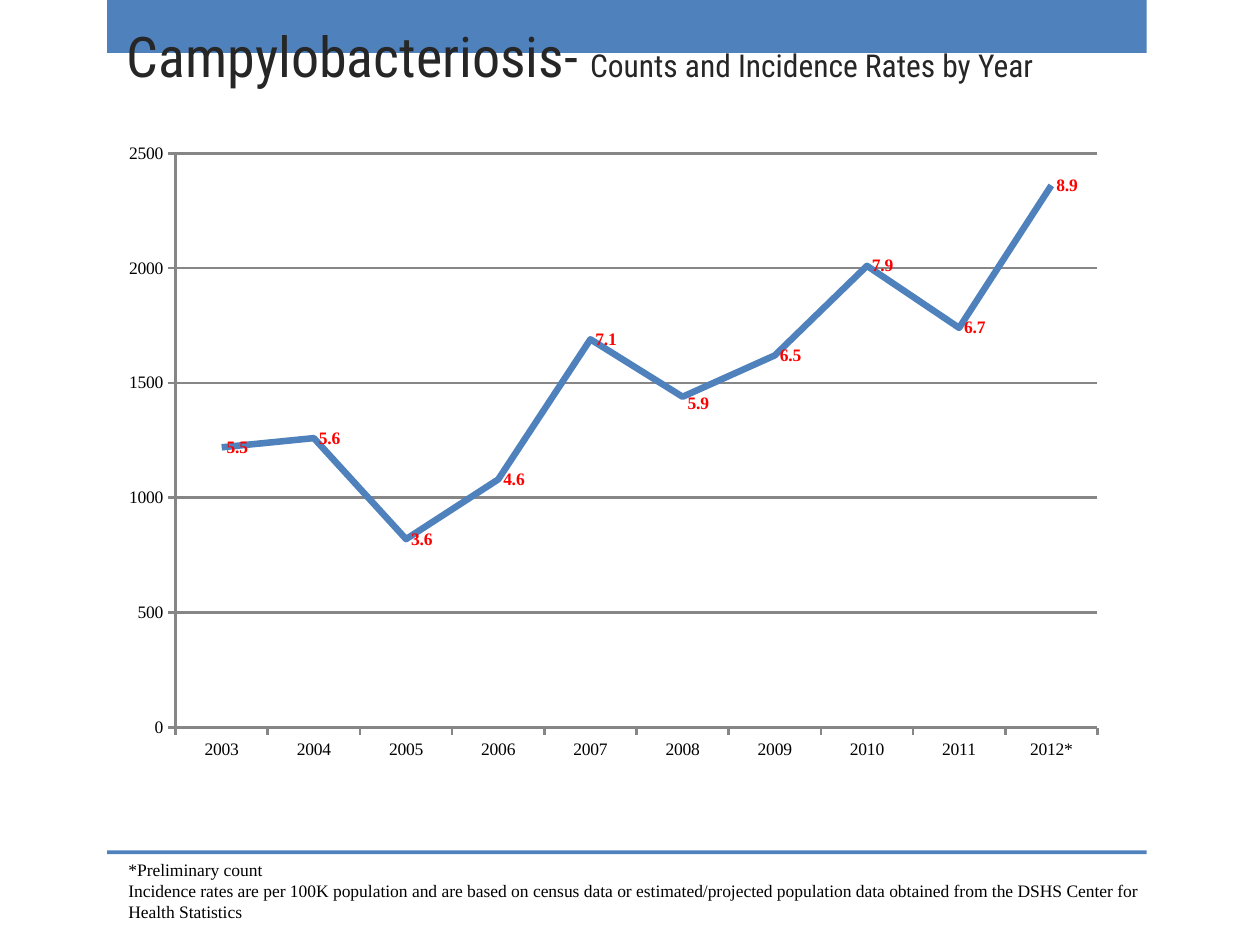
from lxml.etree import SubElement
from pptx import Presentation
from pptx.chart.data import CategoryChartData
from pptx.dml.color import RGBColor
from pptx.enum.chart import XL_CHART_TYPE, XL_LABEL_POSITION, XL_MARKER_STYLE, XL_TICK_MARK
from pptx.enum.shapes import MSO_SHAPE
from pptx.enum.text import MSO_ANCHOR
from pptx.oxml import parse_xml
from pptx.oxml.ns import nsdecls, qn
from pptx.util import Inches, Pt

BLUE, GRAY, RED, BLACK, INK = "4F81BD", "868686", "FF0000", "000000", "262626"
HEADING_FONT, BODY_FONT = "Roboto Condensed", "Times New Roman"
YEARS = ["2003", "2004", "2005", "2006", "2007", "2008", "2009", "2010", "2011", "2012*"]
COUNTS = [1220, 1260, 820, 1080, 1690, 1440, 1620, 2010, 1740, 2360]
RATES = ["5.5", "5.6", "3.6", "4.6", "7.1", "5.9", "6.5", "7.9", "6.7", "8.9"]
LOWERED_YEAR = "2008"


def color(value):
    """Turn a hex string into a colour."""
    return RGBColor.from_string(value)


def inches(box):
    """Convert left, top, width and height to lengths."""
    return [Inches(length) for length in box]


def style_font(font, name, size, ink, bold=False):
    """Set the face, size and colour of a font."""
    font.name, font.size, font.bold = name, Pt(size), bold
    font.color.rgb = color(ink)


def style_line(line, ink, width):
    """Set the colour and width of a line."""
    line.color.rgb = color(ink)
    line.width = Pt(width)


def add_band(page, box):
    """Draw a solid blue band."""
    band = page.shapes.add_shape(MSO_SHAPE.RECTANGLE, *inches(box))
    band.shadow.inherit = False
    band.fill.solid()
    band.fill.fore_color.rgb = color(BLUE)
    band.line.fill.background()


def add_text(page, box, paragraphs, font_name, ink, anchor=MSO_ANCHOR.TOP):
    """Write paragraphs given as lists of text and size pairs."""
    frame = page.shapes.add_textbox(*inches(box)).text_frame
    frame.word_wrap = True
    frame.vertical_anchor = anchor
    for index, runs in enumerate(paragraphs):
        para = frame.add_paragraph() if index else frame.paragraphs[0]
        for text, size in runs:
            span = para.add_run()
            span.text = text
            style_font(span.font, font_name, size, ink)


def manual_layout(**settings):
    """Build a chart layout element from its settings."""
    layout = parse_xml(f"<c:layout {nsdecls('c')}><c:manualLayout/></c:layout>")
    for name, value in settings.items():
        SubElement(layout[0], qn(f"c:{name}")).set("val", str(value))
    return layout


def place_plot(chart, left, top, width, height):
    """Fix the inner plot area as shares of the chart."""
    area = chart.plots[0]._element.getparent()
    for layout in area.findall(qn("c:layout")):
        area.remove(layout)
    area.insert(0, manual_layout(layoutTarget="inner", xMode="edge", yMode="edge",
                                 x=left, y=top, w=width, h=height))


def label_rates(series):
    """Label each yearly count with its incidence rate."""
    for index, rate in enumerate(RATES):
        label = series.points[index].data_label
        span = label.text_frame.paragraphs[0].add_run()
        span.text = rate
        style_font(span.font, BODY_FONT, 10, RED, True)
        label.position = XL_LABEL_POSITION.RIGHT
    lowered = series._element.findall(".//" + qn("c:dLbl"))[YEARS.index(LOWERED_YEAR)]
    lowered.find(qn("c:idx")).addnext(manual_layout(x=0, y=0.01))


def add_count_chart(page, box):
    """Plot the yearly counts as a line chart."""
    data = CategoryChartData()
    data.categories = YEARS
    data.add_series("Series 1", COUNTS)
    chart = page.shapes.add_chart(XL_CHART_TYPE.LINE, *inches(box), data).chart
    chart.has_legend = chart.has_title = False
    style_font(chart.font, BODY_FONT, 10, BLACK)
    place_plot(chart, 0.086, 0.04, 0.869, 0.841)
    for axis in (chart.category_axis, chart.value_axis):
        axis.major_tick_mark = XL_TICK_MARK.OUTSIDE
        axis.minor_tick_mark = XL_TICK_MARK.NONE
        style_line(axis.format.line, GRAY, 1.5)
    scale = chart.value_axis
    scale.minimum_scale, scale.maximum_scale, scale.major_unit = 0, 2500, 500
    scale.has_major_gridlines = True
    style_line(scale.major_gridlines.format.line, GRAY, 1.5)
    chart.plots[0].vary_by_categories = False
    series = chart.plots[0].series[0]
    series.smooth = False
    series.marker.style = XL_MARKER_STYLE.NONE
    style_line(series.format.line, BLUE, 3.75)
    label_rates(series)


def main():
    """Build the slide and save it."""
    deck = Presentation()
    deck.slide_width, deck.slide_height = Inches(10), Inches(7.5)
    page = deck.slides.add_slide(deck.slide_layouts[6])
    for top, height in ((0, 0.42), (6.75, 0.03)):
        add_band(page, (0.85, top, 8.25, height))
    title = [("Campylobacteriosis-", 32), (" ", 28), ("Counts and Incidence Rates by Year", 18)]
    add_text(page, (0.91, 0.16, 8.2, 0.59), [title], HEADING_FONT, INK, MSO_ANCHOR.BOTTOM)
    notes = [
        "*Preliminary count",
        "Incidence rates are per 100K population and are based on census data or "
        "estimated/projected population data obtained from the DSHS Center for",
        "Health Statistics",
    ]
    add_text(page, (0.92, 6.77, 8.75, 0.61), [[(note, 10)] for note in notes], BODY_FONT, BLACK)
    add_count_chart(page, (0.67, 1, 8.42, 5.42))
    deck.save("out.pptx")


if __name__ == "__main__":
    main()
